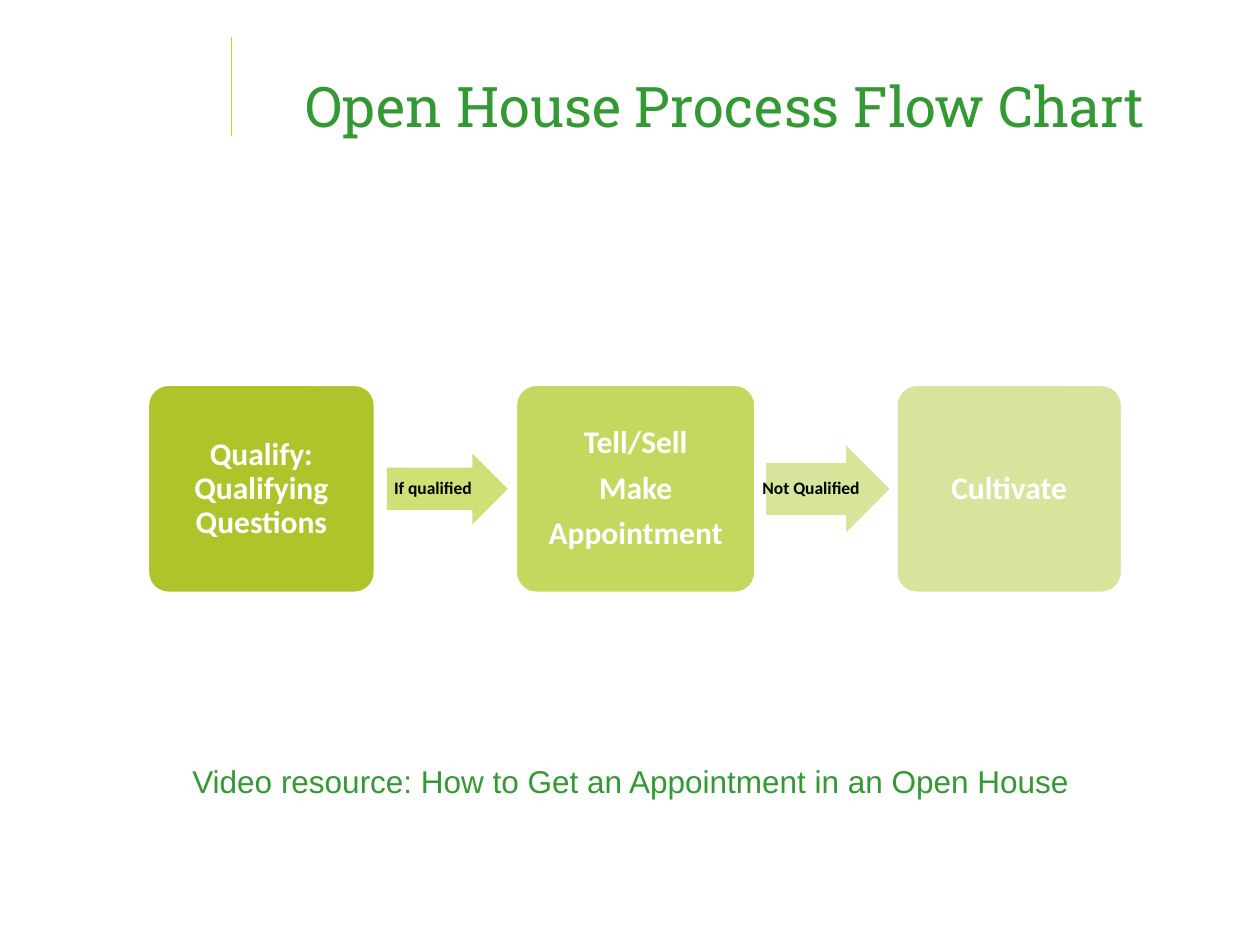
import dataclasses
import typing

import pptx
import pptx.dml.color
import pptx.enum.shapes
import pptx.enum.text
import pptx.oxml
import pptx.oxml.ns
import pptx.util

Inches = pptx.util.Inches
Pt = pptx.util.Pt
Kind = pptx.enum.shapes.MSO_SHAPE
Align = pptx.enum.text.PP_ALIGN
Anchor = pptx.enum.text.MSO_ANCHOR


@dataclasses.dataclass(frozen=True)
class Theme:
    green: str = "339933"
    lime: str = "C1D72D"
    white: str = "FFFFFF"
    black: str = "000000"
    serif: str = "Roboto Slab"
    sans: str = "Arial"
    label: str = "Calibri"
    head: float = 32
    body: float = 18
    small: float = 10


@dataclasses.dataclass(frozen=True)
class Step:
    left: float
    width: float
    fill: str
    lines: tuple[str, ...]


@dataclasses.dataclass(frozen=True)
class Arrow:
    left: float
    width: float
    height: float
    fill: str
    text: str
    alpha: int = 100


THEME = Theme()
MID = 3.88  # shared centre line of the flow
TALL = 1.66
STEPS = (
    Step(1.17, 1.81, "AFC42B", ("Qualify: Qualifying Questions",)),
    Step(4.09, 1.91, "C4D85F", ("Tell/Sell", "Make", "Appointment")),
    Step(7.11, 1.8, "D6E59B", ("Cultivate",)),
)
ARROWS = (
    Arrow(3.07, 0.96, 0.56, "B8CE2D", "If qualified", 65),
    Arrow(6.08, 0.98, 0.69, "D6E59A", "Not Qualified"),
)


def paint(color: pptx.dml.color.ColorFormat, code: str) -> None:
    color.rgb = pptx.dml.color.RGBColor.from_string(code)


def style(para: typing.Any, face: str, size: float, code: str, bold: bool = False) -> None:
    para.font.name = face
    para.font.size = Pt(size)
    para.font.bold = bold
    paint(para.font.color, code)


def add_block(slide: typing.Any, kind: Kind, item: Step | Arrow, height: float) -> typing.Any:
    """Add a filled shape centred on the flow line."""
    block = slide.shapes.add_shape(
        kind, Inches(item.left), Inches(MID - height / 2), Inches(item.width), Inches(height))
    block.shadow.inherit = False
    block.fill.solid()
    paint(block.fill.fore_color, item.fill)
    return block


def add_label(block: typing.Any, lines: tuple[str, ...], size: float, code: str) -> None:
    frame = block.text_frame
    frame.vertical_anchor = Anchor.MIDDLE
    frame.text = "\n".join(lines)
    for para in frame.paragraphs:
        para.alignment = Align.CENTER
        para.line_spacing = 0.9
        para.space_after = Pt(size * 0.35)
        style(para, THEME.label, size, code, True)


def set_pads(frame: typing.Any, side: float, edge: float, right: float) -> None:
    frame.margin_left = Inches(side)
    frame.margin_top = frame.margin_bottom = Inches(edge)
    frame.margin_right = Inches(right)


def add_step(slide: typing.Any, step: Step) -> None:
    block = add_block(slide, Kind.ROUNDED_RECTANGLE, step, TALL)
    block.adjustments[0] = 0.1
    block.line.width = Pt(2)
    paint(block.line.color, THEME.white)
    set_pads(block.text_frame, 0.07, 0.07, 0.07)
    block.text_frame.word_wrap = True
    add_label(block, step.lines, THEME.body, THEME.white)


def add_arrow(slide: typing.Any, arrow: Arrow) -> None:
    block = add_block(slide, Kind.RIGHT_ARROW, arrow, arrow.height)
    block.adjustments[0] = 0.6
    block.adjustments[1] = 0.5
    block.line.fill.background()
    if arrow.alpha < 100:
        tint = block.fill._xPr.find(".//" + pptx.oxml.ns.qn("a:srgbClr"))
        alpha = pptx.oxml.parse_xml(
            f'<a:alpha {pptx.oxml.ns.nsdecls("a")} val="{arrow.alpha * 1000}"/>')
        tint.append(alpha)
    set_pads(block.text_frame, 0, 0, 0.06)
    block.text_frame.word_wrap = False
    add_label(block, (arrow.text,), THEME.small, THEME.black)


def add_text(slide: typing.Any, text: str, left: float, top: float,
             width: float, height: float, face: str, size: float) -> typing.Any:
    box = slide.shapes.add_textbox(Inches(left), Inches(top), Inches(width), Inches(height))
    box.text_frame.word_wrap = True
    box.text_frame.text = text
    style(box.text_frame.paragraphs[0], face, size, THEME.green)
    return box.text_frame


def add_rule(slide: typing.Any) -> None:
    rule = slide.shapes.add_connector(
        pptx.enum.shapes.MSO_CONNECTOR.STRAIGHT,
        Inches(1.84), Inches(0.29), Inches(1.84), Inches(1.08))
    rule.line.width = Pt(0.75)
    paint(rule.line.color, THEME.lime)
    rule._element.spPr.append(
        pptx.oxml.parse_xml(f'<a:effectLst {pptx.oxml.ns.nsdecls("a")}/>'))


def main() -> None:
    deck = pptx.Presentation()
    deck.slide_width = Inches(10)
    deck.slide_height = Inches(7.5)
    slide = deck.slides.add_slide(deck.slide_layouts[6])

    add_rule(slide)
    title = add_text(slide, "Open House Process Flow Chart",
                     2.33, 0.25, 7.59, 1.25, THEME.serif, THEME.head)
    title.vertical_anchor = Anchor.MIDDLE
    title.paragraphs[0].line_spacing = Pt(THEME.head)
    video = add_text(slide, "Video resource: How to Get an Appointment in an Open House",
                     0.92, 6, 8.17, 0.4, THEME.sans, THEME.body)
    video.paragraphs[0].alignment = Align.CENTER

    for step in STEPS:
        add_step(slide, step)
    for arrow in ARROWS:
        add_arrow(slide, arrow)
    deck.save("out.pptx")


if __name__ == "__main__":
    main()
